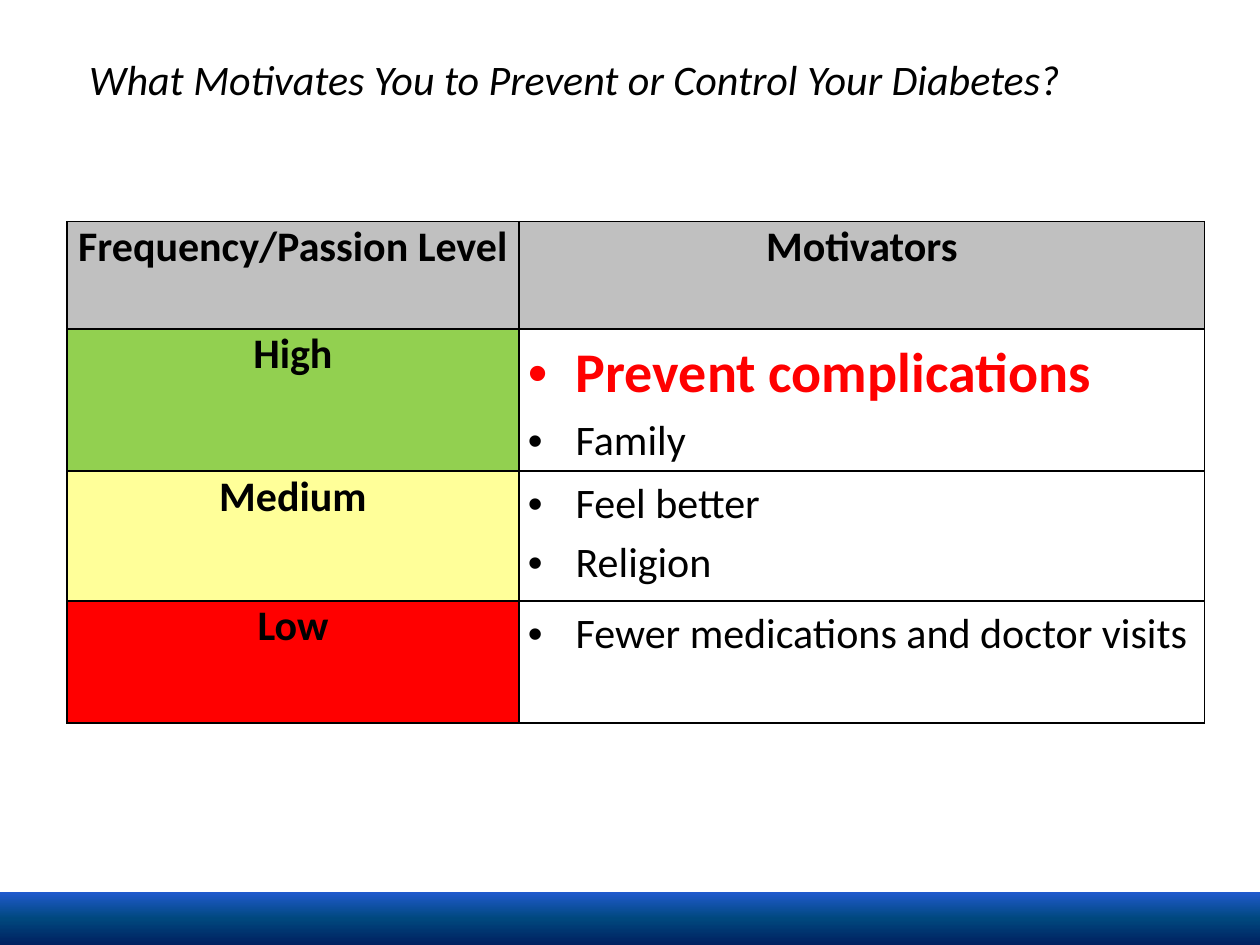
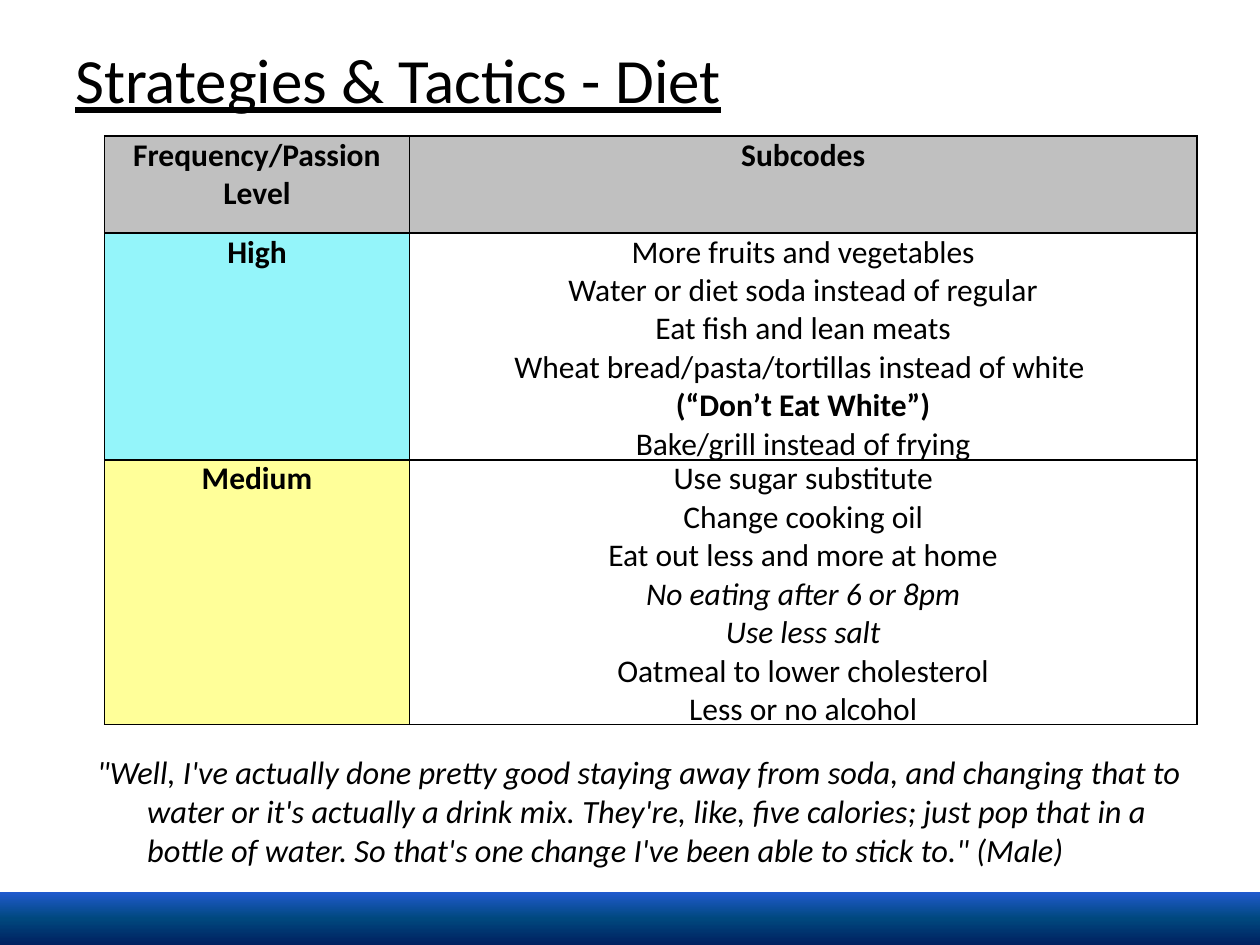
from copy import deepcopy

from pptx import Presentation
from pptx.dml.color import RGBColor
from pptx.enum import shapes, text
from pptx.oxml import parse_xml
from pptx.oxml.ns import nsdecls, qn
from pptx.util import Inches, Pt

FONT = "Calibri"
BLACK = RGBColor(0x00, 0x00, 0x00)
WHITE = RGBColor(0xFF, 0xFF, 0xFF)
GREY = RGBColor(0xC0, 0xC0, 0xC0)
GREEN = RGBColor(0x92, 0xD0, 0x50)
CYAN = RGBColor(0x94, 0xF5, 0xFA)
YELLOW = RGBColor(0xFF, 0xFF, 0x99)
RED = RGBColor(0xFF, 0x00, 0x00)
BAND_STOPS = [(0, RGBColor(0x20, 0x5A, 0xCE)), (0.5, RGBColor(0x00, 0x48, 0x7E)),
              (1, RGBColor(0x00, 0x20, 0x60))]

BOLD = {"bold": True}
ITALIC = {"italic": True}

# Content: each level has a name, a colour and lines of (text, style)
SLIDES = [
    {
        "title": ("What Motivates You to Prevent or Control Your Diabetes?", 0.61, 24, ITALIC),
        "table": {
            "place": (0.53, 1.76), "columns": (3.59, 5.44), "rows": (0.85, 1.13, 1.03, 0.97),
            "size": 24, "bullets": True,
            "head": ("Frequency/Passion Level", "Motivators"),
            "levels": [
                ("High", GREEN, [
                    ("Prevent complications", {"bold": True, "size": 32, "color": RED}),
                    ("Family", {}),
                ]),
                ("Medium", YELLOW, [("Feel better", {}), ("Religion", {})]),
                ("Low", RED, [("Fewer medications and doctor visits", {})]),
            ],
        },
    },
    {
        "title": ("Strategies & Tactics - Diet", 0.5, 36, {"underline": True}),
        "table": {
            "place": (0.83, 1.08), "columns": (2.42, 6.25), "rows": (0.77, 1.8, 2.1),
            "size": 18, "bullets": False,
            "head": ("Frequency/Passion Level", "Subcodes"),
            "levels": [
                ("High", CYAN, [
                    ("More fruits and vegetables", {}),
                    ("Water or diet soda instead of regular", {}),
                    ("Eat fish and lean meats", {}),
                    ("Wheat bread/pasta/tortillas instead of white ", {}),
                    ("(“Don’t Eat White”)", BOLD),
                    ("Bake/grill instead of frying", {}),
                ]),
                ("Medium", YELLOW, [
                    ("Use sugar substitute", {}),
                    ("Change cooking oil", {}),
                    ("Eat out less and more at home", {}),
                    ("No eating after 6 or 8pm", ITALIC),
                    ("Use less salt", ITALIC),
                    ("Oatmeal to lower cholesterol", {}),
                    ("Less or no alcohol", {}),
                ]),
            ],
        },
        "quote": "\"Well, I've actually done pretty good staying away from soda, and changing "
                 "that to water or it's actually a drink mix. They're, like, five calories; just "
                 "pop that in a bottle of water. So that's one change I've been able to stick "
                 "to.\" (Male)",
    },
]


def add_span(para, words, size, color=BLACK, bold=False, italic=False, underline=False):
    span = para.add_run()
    span.text = words
    font = span.font
    font.name, font.size = FONT, Pt(size)
    font.bold, font.italic, font.underline = bold, italic, underline
    font.color.rgb = color


def set_hanging(para, indent):
    properties = para._p.get_or_add_pPr()
    properties.set("marL", str(Inches(indent)))
    properties.set("indent", str(-Inches(indent)))
    return properties


def add_band(page):
    band = page.shapes.add_shape(shapes.MSO_SHAPE.RECTANGLE,
                                 Inches(0), Inches(7.08), Inches(10), Inches(0.42))
    band.shadow.inherit = False
    band.line.fill.background()
    band.fill.gradient()
    band.fill.gradient_angle = 270
    stop_list = next(band.element.iter(qn("a:gsLst")))
    stop_list.append(deepcopy(stop_list[-1]))
    for stop, (position, color) in zip(band.fill.gradient_stops, BAND_STOPS):
        stop.position = position
        stop.color.rgb = color


def add_text(page, place, words, size, style, anchor):
    box = page.shapes.add_textbox(*map(Inches, place))
    frame = box.text_frame
    frame.word_wrap = True
    frame.vertical_anchor = anchor
    add_span(frame.paragraphs[0], words, size, **style)
    return frame.paragraphs[0]


def fill_cell(cell, color, lines, size, bullets=False):
    cell.margin_left = cell.margin_right = Inches(0.07)
    cell.margin_top = cell.margin_bottom = 0
    cell.fill.solid()
    cell.fill.fore_color.rgb = color
    # Borders come ahead of the fill
    for index, side in enumerate(("lnL", "lnR", "lnT", "lnB")):
        cell._tc.get_or_add_tcPr().insert(index, parse_xml(
            f'<a:{side} {nsdecls("a")} w="{Pt(1)}"><a:solidFill>'
            f'<a:srgbClr val="{BLACK}"/></a:solidFill></a:{side}>'))
    frame = cell.text_frame
    for index, (words, style) in enumerate(lines):
        para = frame.add_paragraph() if index else frame.paragraphs[0]
        if bullets:
            properties = set_hanging(para, 0.38)
            properties.append(parse_xml(f'<a:buFont {nsdecls("a")} typeface="Arial"/>'))
            properties.append(parse_xml(f'<a:buChar {nsdecls("a")} char="•"/>'))
            para.line_spacing = 1.15
        else:
            para.alignment = text.PP_ALIGN.CENTER
        add_span(para, words, **{"size": size, **style})


def add_levels_table(page, place, columns, rows, size, bullets, head, levels):
    extent = (sum(columns), sum(rows))
    table = page.shapes.add_table(len(rows), len(columns),
                                  *map(Inches, place + extent)).table
    table.first_row = table.horz_banding = False
    for column, width in zip(table.columns, columns):
        column.width = Inches(width)
    for row, height in zip(table.rows, rows):
        row.height = Inches(height)
    for index, heading in enumerate(head):
        fill_cell(table.cell(0, index), GREY, [(heading, BOLD)], size)
    for index, (level, color, lines) in enumerate(levels, 1):
        fill_cell(table.cell(index, 0), color, [(level, BOLD)], size)
        fill_cell(table.cell(index, 1), WHITE, lines, size, bullets)


def main():
    deck = Presentation()
    deck.slide_width, deck.slide_height = Inches(10), Inches(7.5)
    for content in SLIDES:
        page = deck.slides.add_slide(deck.slide_layouts[6])
        add_band(page)
        # Title
        title, left, size, style = content["title"]
        add_text(page, (left, 0, 9, 1.25), title, size, style, text.MSO_ANCHOR.MIDDLE)
        # Participant quote below the table
        if "quote" in content:
            para = add_text(page, (0.67, 5.92, 9.08, 1.42), content["quote"], 18.5, ITALIC,
                            text.MSO_ANCHOR.TOP)
            set_hanging(para, 0.4)
        add_levels_table(page, **content["table"])
    deck.save("out.pptx")


if __name__ == "__main__":
    main()
